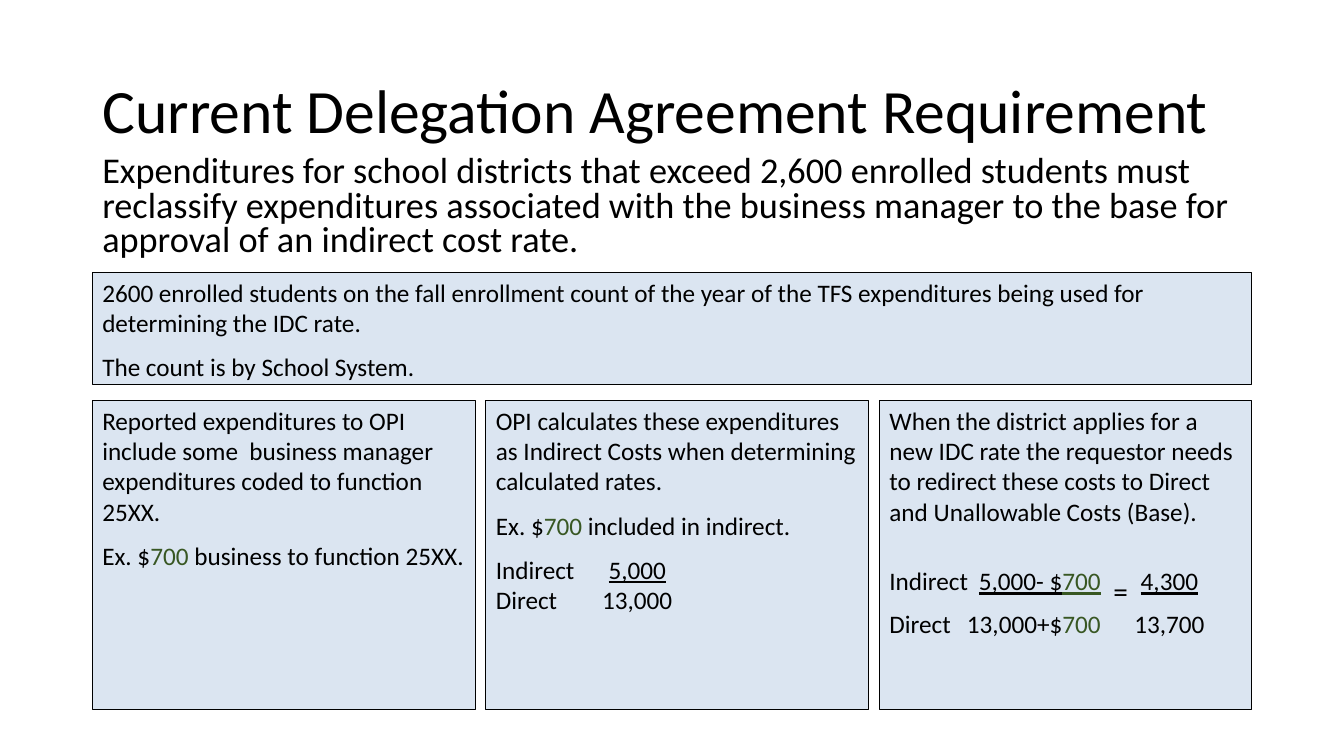
from dataclasses import dataclass

from lxml.etree import SubElement
from pptx import Presentation
from pptx.dml.color import RGBColor
from pptx.enum.shapes import MSO_SHAPE
from pptx.enum.text import MSO_ANCHOR, MSO_AUTO_SIZE, PP_ALIGN
from pptx.oxml.ns import qn
from pptx.util import Pt


@dataclass(frozen=True)
class Theme:
    font: str = "Calibri"
    ink: RGBColor = RGBColor(0, 0, 0)
    panel: RGBColor = RGBColor(0xDB, 0xE5, 0xF1)
    green: RGBColor = RGBColor(0x38, 0x57, 0x23)
    title: float = 44
    lead: float = 25.9
    text: float = 18
    equals: float = 36


class Deck:
    def __init__(self, theme):
        self.theme = theme
        self.file = Presentation()
        self.file.slide_width = Pt(960)
        self.file.slide_height = Pt(540)
        self.slide = self.file.slides.add_slide(self.file.slide_layouts[5])

    def style(self, run, size, color=None, line=False):
        font = run.font
        font.name = self.theme.font
        font.size = Pt(size)
        font.color.rgb = color or self.theme.ink
        if line:
            font.underline = True

    def fill(self, frame, text, size, ratio, before=0):
        frame.word_wrap = True
        frame.auto_size = MSO_AUTO_SIZE.NONE
        frame.text = text
        line = frame.paragraphs[0]
        line.alignment = PP_ALIGN.LEFT
        line.line_spacing = ratio
        line.space_before = Pt(before)
        self.style(line.runs[0], size)

    def title(self, text, box):
        shape = self.slide.shapes.title
        shape.left, shape.top, shape.width, shape.height = map(Pt, box)
        self.fill(shape.text_frame, text, self.theme.title, 0.9)
        shape.text_frame.vertical_anchor = MSO_ANCHOR.MIDDLE

    def lead(self, text, box):
        shape = self.slide.shapes.add_textbox(*map(Pt, box))
        self.fill(shape.text_frame, text, self.theme.lead, 0.8, 10)

    def panel(self, lines, box, stops=()):
        shape = self.slide.shapes.add_shape(MSO_SHAPE.RECTANGLE, *map(Pt, box))
        shape.shadow.inherit = False
        shape.fill.solid()
        shape.fill.fore_color.rgb = self.theme.panel
        shape.line.color.rgb = self.theme.ink
        shape.line.width = Pt(0.75)
        frame = shape.text_frame
        frame.word_wrap = True
        frame.vertical_anchor = MSO_ANCHOR.TOP
        for place, pieces in enumerate(lines):
            line = frame.add_paragraph() if place else frame.paragraphs[0]
            line.alignment = PP_ALIGN.LEFT
            line.space_after = Pt(10)
            for text, *marks in pieces:
                self.piece(line, text, marks)
        if stops:
            tabs = SubElement(line._p.get_or_add_pPr(), qn("a:tabLst"))
            for place, align in stops:
                SubElement(tabs, qn("a:tab"), pos=str(Pt(place)), algn=align)

    def piece(self, line, text, marks):
        if text == "\n":
            line.add_line_break()
            return
        run = line.add_run()
        run.text = text
        size = self.theme.equals if "low" in marks else self.theme.text
        color = self.theme.green if "green" in marks else None
        self.style(run, size, color, "under" in marks)
        if "low" in marks:
            run._r.get_or_add_rPr().set("baseline", "-24000")

    def save(self):
        self.file.save("out.pptx")


def main():
    deck = Deck(Theme())
    left, width = 66, 828
    deck.title("Current Delegation Agreement Requirement", (left, 29, width, 104))
    deck.lead(
        "Expenditures for school districts that exceed 2,600 enrolled students must "
        "reclassify expenditures associated with the business manager to the base "
        "for approval of an indirect cost rate.",
        (left, 107.5, width, 86),
    )
    deck.panel(
        [
            [("2600 enrolled students on the fall enrollment count of the year of the "
              "TFS expenditures being used for determining the IDC rate.",)],
            [("The count is by School System.",)],
        ],
        (left, 194.5, width, 80.5),
    )

    cost = ("700", "green")
    cards = [
        ([
            [("Reported expenditures to OPI include some  business manager "
              "expenditures coded to function 25XX.",)],
            [("Ex. $",), cost, (" business to function 25XX.",)],
        ], ()),
        ([
            [("OPI calculates these expenditures as Indirect Costs when "
              "determining calculated rates.",)],
            [("Ex. $",), cost, (" included in indirect.",)],
            [("Indirect\t",), ("5,000", "under"), ("\n",), ("Direct\t13,000",)],
        ], [(101, "ctr")]),
        ([
            [("When the district applies for a new IDC rate the requestor needs to "
              "redirect these costs to Direct and Unallowable Costs (Base).",)],
            [("Indirect\t",), ("5,000- $", "under"), (*cost, "under"), ("\t",),
             ("=", "low"), ("\t",), ("4,300", "under"), ("\n",),
             ("Direct\t13,000+$",), cost, ("\t\t13,700",)],
        ], [(151, "r"), (160, "l"), (200, "ctr")]),
    ]
    wide, gap = 273.6, 7.5
    for place, (lines, stops) in enumerate(cards):
        x = left + place * (wide + gap)
        deck.panel(lines, (x, 286, min(wide, left + width - x), 221), stops)
    deck.save()


if __name__ == "__main__":
    main()
